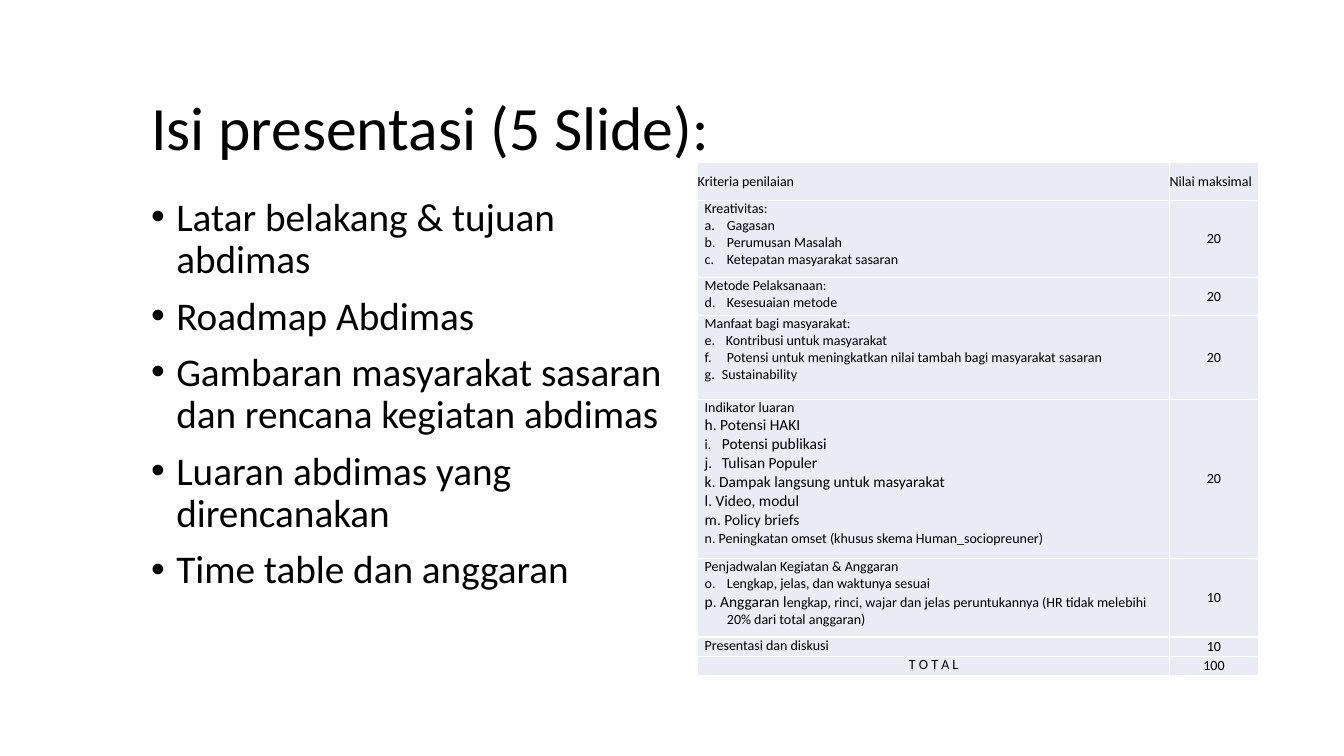
from pptx import Presentation
from pptx.dml.color import RGBColor
from pptx.enum.text import MSO_ANCHOR, PP_ALIGN
from pptx.oxml import parse_xml
from pptx.oxml.ns import nsdecls
from pptx.util import Inches, Pt

MIDDLE, TOP = MSO_ANCHOR.MIDDLE, MSO_ANCHOR.TOP
LEFT, CENTER = PP_ALIGN.LEFT, PP_ALIGN.CENTER

THEME = {
    "font": "Calibri", "text": RGBColor(0, 0, 0),
    "cell": RGBColor(0xE9, 0xEB, 0xF5), "border": "FFFFFF",
    "title": 44, "body": 28, "item": 11, "table": 10,
}
ITEM, SMALL = THEME["item"], THEME["table"]

TITLE = "Isi presentasi (5 Slide):"
BULLETS = [
    "Latar belakang & tujuan abdimas",
    "Roadmap Abdimas",
    "Gambaran masyarakat sasaran dan rencana kegiatan abdimas",
    "Luaran abdimas yang direncanakan",
    "Time table dan anggaran",
]
HEADER = ("Kriteria penilaian", "Nilai maksimal")
TOTAL = "T O T A L"
WIDE, NARROW = 0.22, 0.17
CRITERIA = [
    (0.76, "20", "Kreativitas:", [
        (WIDE, [("a.\tGagasan", SMALL)]),
        (WIDE, [("b.\tPerumusan Masalah", SMALL)]),
        (WIDE, [("c.\tKetepatan masyarakat sasaran", SMALL)]),
    ]),
    (0.38, "20", "Metode Pelaksanaan:", [
        (WIDE, [("d.\tKesesuaian metode", SMALL)]),
    ]),
    (0.83, "20", "Manfaat bagi masyarakat:", [
        (0.21, [("e.\tKontribusi untuk masyarakat", SMALL)]),
        (WIDE, [("f.\tPotensi untuk meningkatkan nilai tambah bagi masyarakat sasaran", SMALL)]),
        (NARROW, [("g.\tSustainability", SMALL)]),
    ]),
    (1.58, "20", "Indikator luaran", [
        (WIDE, [("h. Potensi HAKI", ITEM)]),
        (NARROW, [("i.", SMALL), ("\tPotensi publikasi", ITEM)]),
        (NARROW, [("j.\tTulisan Populer", ITEM)]),
        (0, [("k. Dampak langsung untuk masyarakat", ITEM)]),
        (0, [("l. Video, modul", ITEM)]),
        (0, [("m. Policy briefs", ITEM)]),
        (0, [("n. Peningkatan omset (khusus skema Human_sociopreuner)", SMALL)]),
    ]),
    (0.78, "10", "Penjadwalan Kegiatan & Anggaran", [
        (WIDE, [("o.\tLengkap, jelas, dan waktunya sesuai", SMALL)]),
        (WIDE, [("p. Anggaran l", ITEM),
                ("engkap, rinci, wajar dan jelas peruntukannya "
                 "(HR tidak melebihi 20% dari total anggaran)", SMALL)]),
    ]),
    (0.19, "10", "Presentasi dan diskusi", []),
]
COLUMNS = (4.68, 0.88)
HEADER_H, TOTAL_H = 0.38, 0.19


def add_run(p, text, size):
    r = p.add_run()
    r.text = text
    r.font.name = THEME["font"]
    r.font.size = Pt(size)
    r.font.color.rgb = THEME["text"]


def hang(p, indent):
    pPr = p._p.get_or_add_pPr()
    pPr.set("marL", str(Inches(indent)))
    pPr.set("indent", str(-Inches(indent)))
    return pPr


def next_paragraph(tf, index):
    return tf.add_paragraph() if index else tf.paragraphs[0]


def add_text(s, box, lines, size, anchor=TOP, bulleted=False):
    tf = s.shapes.add_textbox(*map(Inches, box)).text_frame
    tf.word_wrap = True
    tf.vertical_anchor = anchor
    for i, line in enumerate(lines):
        p = next_paragraph(tf, i)
        p.line_spacing = 0.9
        if i:
            p.space_before = Pt(10)
        if bulleted:
            pPr = hang(p, 0.25)
            pPr.append(parse_xml(f'<a:buFont {nsdecls("a")} typeface="Arial"/>'))
            pPr.append(parse_xml(f'<a:buChar {nsdecls("a")} char="•"/>'))
        add_run(p, line, size)


def fill_cell(cell, paragraphs, align=LEFT, anchor=MIDDLE, inset=0.07):
    cell.margin_left = cell.margin_right = Inches(inset)
    cell.margin_top = cell.margin_bottom = 0
    cell.vertical_anchor = anchor
    tcPr = cell._tc.get_or_add_tcPr()
    for side in ("lnL", "lnR", "lnT", "lnB"):
        tcPr.append(parse_xml(
            f'<a:{side} {nsdecls("a")} w="{Pt(1)}"><a:solidFill>'
            f'<a:srgbClr val="{THEME["border"]}"/></a:solidFill></a:{side}>'))
    cell.fill.solid()
    cell.fill.fore_color.rgb = THEME["cell"]
    for i, (indent, runs) in enumerate(paragraphs):
        p = next_paragraph(cell.text_frame, i)
        p.alignment = align
        if indent:
            hang(p, indent)
        for text, size in runs:
            add_run(p, text, size)


def plain(text):
    return (0, [(text, SMALL)])


def add_criteria(s):
    heights = [HEADER_H, *(row[0] for row in CRITERIA), TOTAL_H]
    frame = s.shapes.add_table(len(heights), len(COLUMNS), Inches(6.92), Inches(1.61),
                               Inches(sum(COLUMNS)), Inches(sum(heights)))
    table = frame.table
    table.first_row = table.horz_banding = False
    for column, width in zip(table.columns, COLUMNS):
        column.width = Inches(width)
    for row, height in zip(table.rows, heights):
        row.height = Inches(height)
    for c, text in enumerate(HEADER):
        fill_cell(table.cell(0, c), [plain(text)], inset=0)
    for r, (_, score, heading, items) in enumerate(CRITERIA, 1):
        fill_cell(table.cell(r, 0), [plain(heading), *items], anchor=TOP)
        fill_cell(table.cell(r, 1), [plain(score)], CENTER)
    last = len(heights) - 1
    total = sum(int(row[1]) for row in CRITERIA)
    fill_cell(table.cell(last, 0), [plain(TOTAL)], CENTER, TOP)
    fill_cell(table.cell(last, 1), [plain(str(total))], CENTER)


def main():
    prs = Presentation()
    prs.slide_width, prs.slide_height = Inches(13.33), Inches(7.5)
    s = prs.slides.add_slide(prs.slide_layouts[6])
    add_text(s, (1.4, 0.83, 10.36, 0.92), [TITLE], THEME["title"], MIDDLE)
    add_text(s, (1.4, 1.91, 5.38, 4.76), BULLETS, THEME["body"], bulleted=True)
    add_criteria(s)
    prs.save("out.pptx")


if __name__ == "__main__":
    main()
